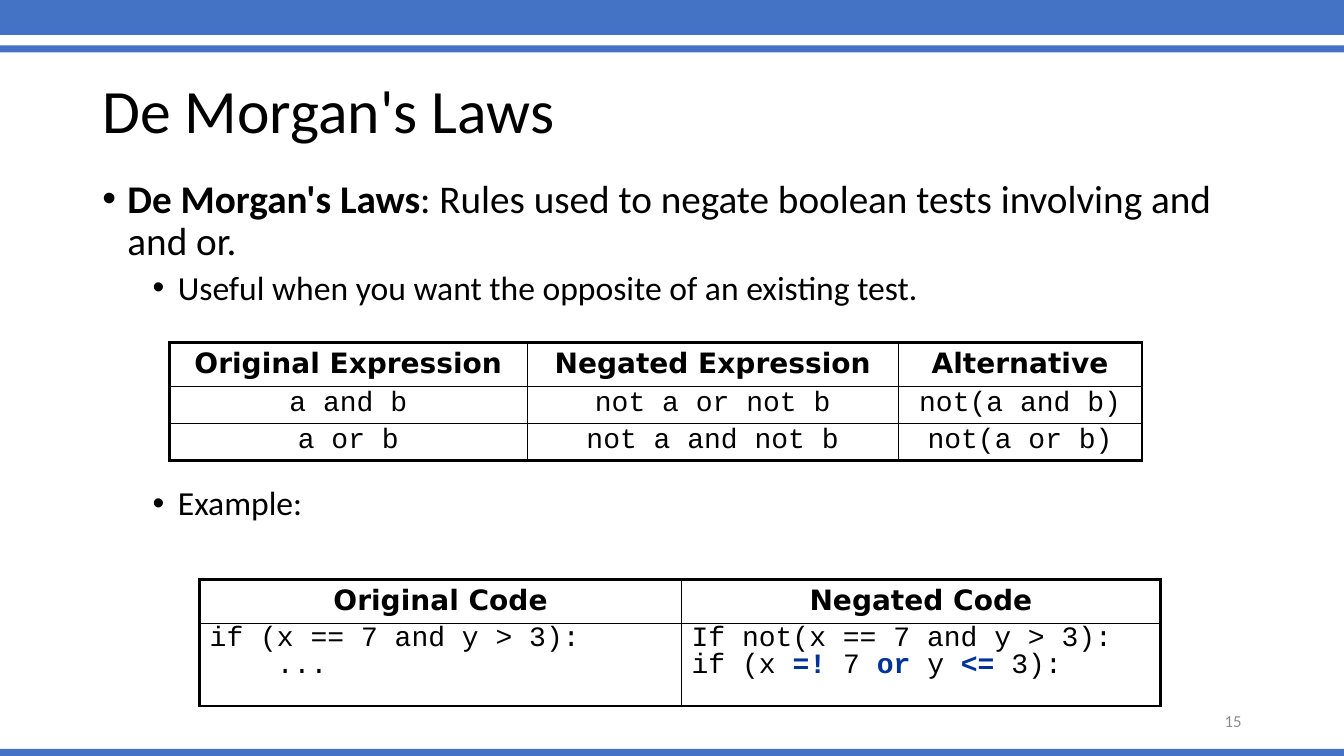
from dataclasses import dataclass

from lxml.etree import SubElement
from pptx import Presentation
from pptx.dml.color import RGBColor
from pptx.enum.shapes import MSO_SHAPE as Preset
from pptx.enum.text import MSO_ANCHOR as Anchor, PP_ALIGN as Align
from pptx.oxml.ns import qn
from pptx.util import Pt

COLORS = {"bar": "4472C4", "text": "000000", "change": "003399", "number": "8C8C8C"}
BODY_FONT, HEAD_FONT, CODE_FONT = "Calibri", "DejaVu Sans", "Courier New"
THIN, THICK = 1, 2.25


@dataclass(frozen=True)
class Box:
    left: float
    top: float
    width: float
    height: float


@dataclass(frozen=True)
class Run:
    text: str
    bold: bool = False
    color: str = "text"


@dataclass(frozen=True)
class Line:
    runs: tuple[Run, ...]
    indent: float = 0


@dataclass(frozen=True)
class Grid:
    left: float
    top: float
    widths: tuple[float, ...]
    heights: tuple[float, ...]
    headings: tuple[str, ...]
    rows: tuple[tuple[tuple[Line, ...], ...], ...]
    align: Align
    line_spacing: float


def plain(text: str, indent: float = 0) -> Line:
    return Line((Run(text),), indent)


BARS = (Box(0, -2, 960, 27), Box(0, 32.4, 960, 5), Box(0, 535, 960, 5))

LAWS = Grid(
    121, 244.8, (255.6, 265, 174.2), (31, 26.5, 26.5),
    ("Original Expression", "Negated Expression", "Alternative"),
    (
        ((plain("a and b"),), (plain("not a or not b"),), (plain("not(a and b)"),)),
        ((plain("a or b"),), (plain("not a and not b"),), (plain("not(a or b)"),)),
    ),
    Align.CENTER, 0.8,
)

NEGATED_TEST = Line((
    Run("if (x "), Run("=! ", True, "change"), Run("7 "), Run("or ", True, "change"),
    Run("y "), Run("<=", True, "change"), Run(" 3):"),
))
EXAMPLE = Grid(
    142.6, 414, (344.2, 342), (31, 59),
    ("Original Code", "Negated Code"),
    ((
        (plain("if (x == 7 and y > 3):"), plain("...", indent=48)),
        (plain("If not(x == 7 and y > 3):"), NEGATED_TEST),
    ),),
    Align.LEFT, 0.7,
)


def write(frame, line: Line, *, size: float, font: str = BODY_FONT,
          align: Align = Align.LEFT, spacing: float = 1, before: float = 0,
          bullet: bool = False) -> None:
    """Fill the frame's empty first paragraph, or append a new one."""
    paragraph = frame.paragraphs[0]
    if paragraph.runs:
        paragraph = frame.add_paragraph()
    paragraph.alignment = align
    paragraph.line_spacing = spacing
    paragraph.space_before = Pt(before)
    properties = paragraph._p.get_or_add_pPr()
    properties.set("marL", str(Pt(line.indent)))
    properties.set("indent", str(Pt(-18 if bullet else 0)))
    if bullet:
        SubElement(properties, qn("a:buFont"), typeface="Arial")
        SubElement(properties, qn("a:buChar"), char="•")
    for part in line.runs:
        run = paragraph.add_run()
        run.text = part.text
        run.font.name = font
        run.font.size = Pt(size)
        run.font.bold = part.bold
        run.font.color.rgb = RGBColor.from_string(COLORS[part.color])


def add_frame(slide, box: Box, anchor: Anchor = Anchor.TOP):
    shape = slide.shapes.add_textbox(
        Pt(box.left), Pt(box.top), Pt(box.width), Pt(box.height))
    frame = shape.text_frame
    frame.word_wrap = True
    frame.vertical_anchor = anchor
    return frame


def add_bar(slide, box: Box) -> None:
    shape = slide.shapes.add_shape(
        Preset.RECTANGLE, Pt(box.left), Pt(box.top), Pt(box.width), Pt(box.height))
    shape.shadow.inherit = False
    shape.fill.solid()
    shape.fill.fore_color.rgb = RGBColor.from_string(COLORS["bar"])
    shape.line.fill.background()


def set_borders(cell, outer: dict[str, bool]) -> None:
    """Draw thick lines on the outer sides of the table and thin ones inside."""
    properties = cell._tc.get_or_add_tcPr()
    for side, is_outer in outer.items():
        width = Pt(THICK if is_outer else THIN)
        border = SubElement(properties, qn(f"a:ln{side}"), w=str(width))
        fill = SubElement(border, qn("a:solidFill"))
        SubElement(fill, qn("a:srgbClr"), val=COLORS["text"])


def add_grid(slide, grid: Grid) -> None:
    last_row, last_column = len(grid.heights) - 1, len(grid.widths) - 1
    table = slide.shapes.add_table(
        last_row + 1, last_column + 1, Pt(grid.left), Pt(grid.top),
        Pt(sum(grid.widths)), Pt(sum(grid.heights))).table
    table.first_row = table.horz_banding = False
    for column, width in zip(table.columns, grid.widths):
        column.width = Pt(width)
    for row, height in zip(table.rows, grid.heights):
        row.height = Pt(height)

    for column, heading in enumerate(grid.headings):
        write(table.cell(0, column).text_frame, Line((Run(heading, bold=True),)),
              size=20, font=HEAD_FONT, align=Align.CENTER)
    for row, cells in enumerate(grid.rows, start=1):
        for column, lines in enumerate(cells):
            for line in lines:
                write(table.cell(row, column).text_frame, line, size=20, font=CODE_FONT,
                      align=grid.align, spacing=grid.line_spacing, before=4)

    for row in range(last_row + 1):
        for column in range(last_column + 1):
            cell = table.cell(row, column)
            set_borders(cell, {"L": column == 0, "R": column == last_column,
                               "T": row == 0, "B": row == last_row})
            cell.fill.background()


def main() -> None:
    presentation = Presentation()
    presentation.slide_width, presentation.slide_height = Pt(960), Pt(540)
    slide = presentation.slides.add_slide(presentation.slide_layouts[6])
    for bar in BARS:
        add_bar(slide, bar)

    title = add_frame(slide, Box(66, 28.8, 828, 104.4), Anchor.MIDDLE)
    write(title, plain("De Morgan's Laws"), size=44, spacing=0.9)

    body = add_frame(slide, Box(66, 124.6, 828, 415.4))
    definition = Line((
        Run("De Morgan's Laws", bold=True),
        Run(": Rules used to negate boolean tests involving and and or."),
    ), indent=18)
    write(body, definition, size=28, spacing=0.9, before=10, bullet=True)
    write(body, plain("Useful when you want the opposite of an existing test.", indent=54),
          size=24, spacing=0.9, before=5, bullet=True)
    # The wide gap leaves room for the table of laws.
    write(body, plain("Example:", indent=54),
          size=24, spacing=0.9, before=128, bullet=True)

    add_grid(slide, LAWS)
    add_grid(slide, EXAMPLE)

    number = add_frame(slide, Box(678, 500.5, 216, 28.8), Anchor.MIDDLE)
    write(number, Line((Run("15", color="number"),)), size=12, align=Align.RIGHT)
    presentation.save("out.pptx")


if __name__ == "__main__":
    main()
